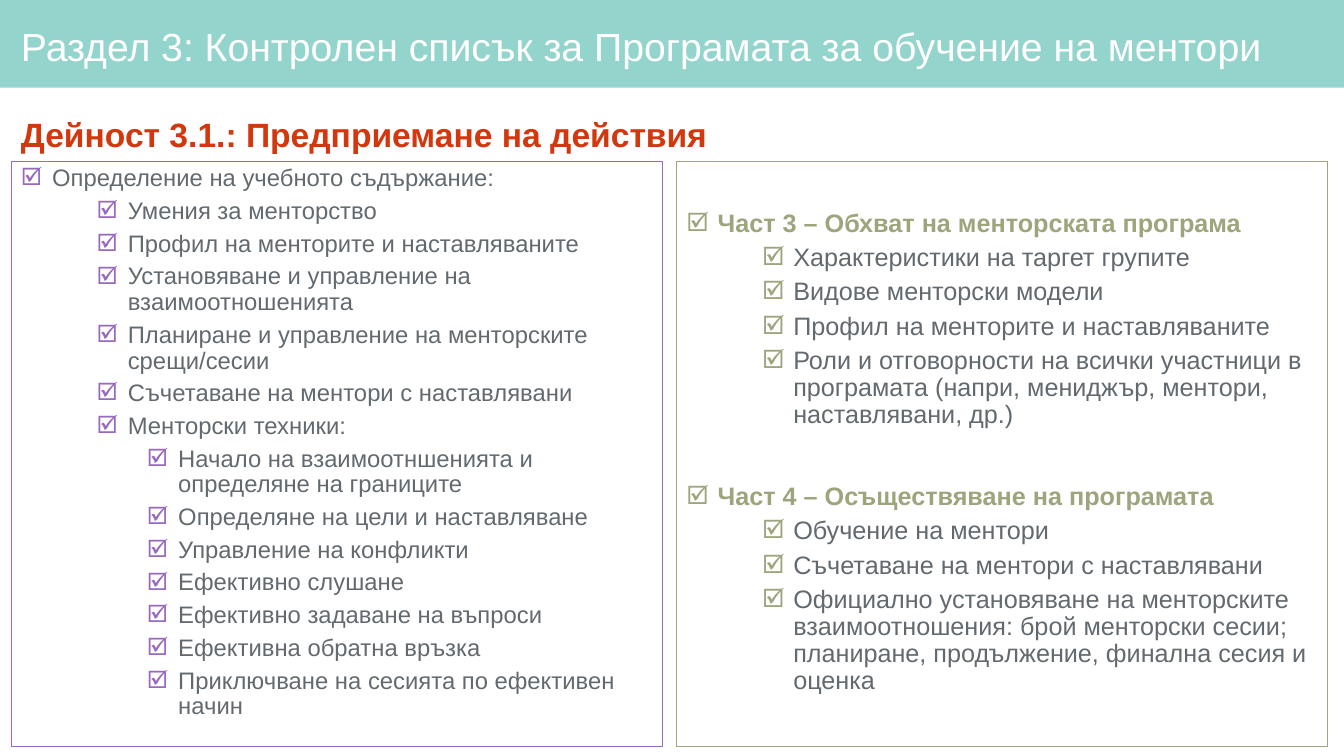
from dataclasses import dataclass

from lxml import etree
from pptx import Presentation
from pptx.dml.color import RGBColor
from pptx.enum.shapes import MSO_SHAPE
from pptx.enum.text import MSO_ANCHOR, PP_ALIGN
from pptx.oxml.ns import qn
from pptx.util import Inches, Pt

RECTANGLE = MSO_SHAPE.RECTANGLE
TOP, MIDDLE = MSO_ANCHOR.TOP, MSO_ANCHOR.MIDDLE
LEFT, JUSTIFY = PP_ALIGN.LEFT, PP_ALIGN.JUSTIFY


@dataclass(frozen=True)
class Theme:
    font: str = "Arial"
    band: str = "93D4CC"
    white: str = "FFFFFF"
    heading: str = "D3370D"
    body: str = "636A6F"
    purple: str = "9869BD"
    olive: str = "9DA57C"
    title_size: int = 28
    heading_size: int = 24
    left_size: int = 17
    right_size: int = 18


THEME = Theme()
SLIDE_WIDTH, SLIDE_HEIGHT = 13.33, 7.5
MARGIN, CONTENT_WIDTH = 0.11, 13.06
PANEL_TOP, PANEL_WIDTH, PANEL_HEIGHT = 1.6, 6.46, 5.81
BULLET = "🗹"
HANGING = 0.31
LEVEL_INDENTS = (0.31, 1.06, 1.56)

# Each item is (level, text)
TRAINING_CONTENT = [
    (0, "Определение на учебното съдържание:"),
    (1, "Умения за менторство"),
    (1, "Профил на менторите и наставляваните"),
    (1, "Установяване и управление на взаимоотношенията"),
    (1, "Планиране и управление на менторските срещи/сесии"),
    (1, "Съчетаване на ментори с наставлявани"),
    (1, "Менторски техники:"),
    (2, "Начало на взаимоотншенията и определяне на границите"),
    (2, "Определяне на цели и наставляване"),
    (2, "Управление на конфликти"),
    (2, "Ефективно слушане"),
    (2, "Ефективно задаване на въпроси"),
    (2, "Ефективна обратна връзка"),
    (2, "Приключване на сесията по ефективен начин"),
]
PROGRAMME_PARTS = [
    (0, "Част 3 – Обхват на менторската програма"),
    (1, "Характеристики на таргет групите"),
    (1, "Видове менторски модели"),
    (1, "Профил на менторите и наставляваните"),
    (1, "Роли и отговорности на всички участници в програмата "
        "(напри, мениджър, ментори, наставлявани, др.)"),
    (0, "Част 4 – Осъществяване на програмата"),
    (1, "Обучение на ментори"),
    (1, "Съчетаване на ментори с наставлявани"),
    (1, "Официално установяване на менторските взаимоотношения: брой "
        "менторски сесии; планиране, продължение, финална сесия и оценка"),
]


def color(value):
    return RGBColor.from_string(value)


def style_font(para, size, value, bold=False):
    font = para.font
    font.name, font.size, font.bold = THEME.font, Pt(size), bold
    font.color.rgb = color(value)


def add_text_box(page, box, anchor, insets=(0.1, 0.05, 0.1, 0.05)):
    shape = page.shapes.add_textbox(*map(Inches, box))
    frame = shape.text_frame
    frame.word_wrap = True
    frame.vertical_anchor = anchor
    (frame.margin_left, frame.margin_top,
     frame.margin_right, frame.margin_bottom) = map(Inches, insets)
    return shape


def add_bullet(para, level, value):
    props = para._p.get_or_add_pPr()
    props.set("marL", str(Inches(LEVEL_INDENTS[level])))
    props.set("indent", str(-Inches(HANGING)))
    bullet_color = etree.SubElement(props, qn("a:buClr"))
    etree.SubElement(bullet_color, qn("a:srgbClr"), val=value)
    etree.SubElement(props, qn("a:buFont"), typeface=THEME.font)
    etree.SubElement(props, qn("a:buChar"), char=BULLET)


def add_line(page, box, text, size, value, spacing, align=LEFT, bold=False, **options):
    para = add_text_box(page, box, MIDDLE, **options).text_frame.paragraphs[0]
    para.text = text
    para.alignment = align
    para.line_spacing = spacing
    style_font(para, size, value, bold)


def add_title_band(page, box):
    left, top, width, height = box
    band = page.shapes.add_shape(RECTANGLE, *map(Inches, box))
    band.shadow.inherit = False
    band.fill.solid()
    band.fill.fore_color.rgb = color(THEME.band)
    band.line.fill.background()
    add_line(page, (left + MARGIN, top + 0.09, CONTENT_WIDTH, height - 0.09),
             "Раздел 3: Контролен списък за Програмата за обучение на ментори",
             THEME.title_size, THEME.white, 0.9, insets=(0.1, 0.06, 0.06, 0.06))


def add_checklist(page, box, items, size, accent, top_inset=0.05,
                  part_gap=10, accent_parts=False):
    panel = add_text_box(page, box, TOP, (0.1, top_inset, 0.1, 0.05))
    panel.line.color.rgb = color(accent)
    panel.line.width = Pt(0.75)
    frame = panel.text_frame
    for index, (level, text) in enumerate(items):
        para = frame.add_paragraph() if index else frame.paragraphs[0]
        para.text = text
        para.level = level
        para.alignment = LEFT
        para.line_spacing = 0.9
        para.space_before = Pt(5 if level else part_gap if index else 0)
        add_bullet(para, level, accent)
        is_part = accent_parts and level == 0
        style_font(para, size, accent if is_part else THEME.body, is_part)


def build_checklist_slide(deck):
    page = deck.slides.add_slide(deck.slide_layouts[6])

    # Title and activity heading
    add_title_band(page, (0, 0, SLIDE_WIDTH, 0.87))
    add_line(page, (MARGIN, 0.93, CONTENT_WIDTH, 0.6),
             "Дейност 3.1.: Предприемане на действия",
             THEME.heading_size, THEME.heading, 1.5, JUSTIFY, True)

    # Two checklists, flush with the content edges
    right_edge = MARGIN + CONTENT_WIDTH
    add_checklist(page, (MARGIN, PANEL_TOP, PANEL_WIDTH, PANEL_HEIGHT),
                  TRAINING_CONTENT, THEME.left_size, THEME.purple)
    add_checklist(page, (right_edge - PANEL_WIDTH, PANEL_TOP, PANEL_WIDTH, PANEL_HEIGHT),
                  PROGRAMME_PARTS, THEME.right_size, THEME.olive,
                  top_inset=0.49, part_gap=39, accent_parts=True)


def main():
    deck = Presentation()
    deck.slide_width, deck.slide_height = Inches(SLIDE_WIDTH), Inches(SLIDE_HEIGHT)
    build_checklist_slide(deck)
    deck.save("out.pptx")


if __name__ == "__main__":
    main()
